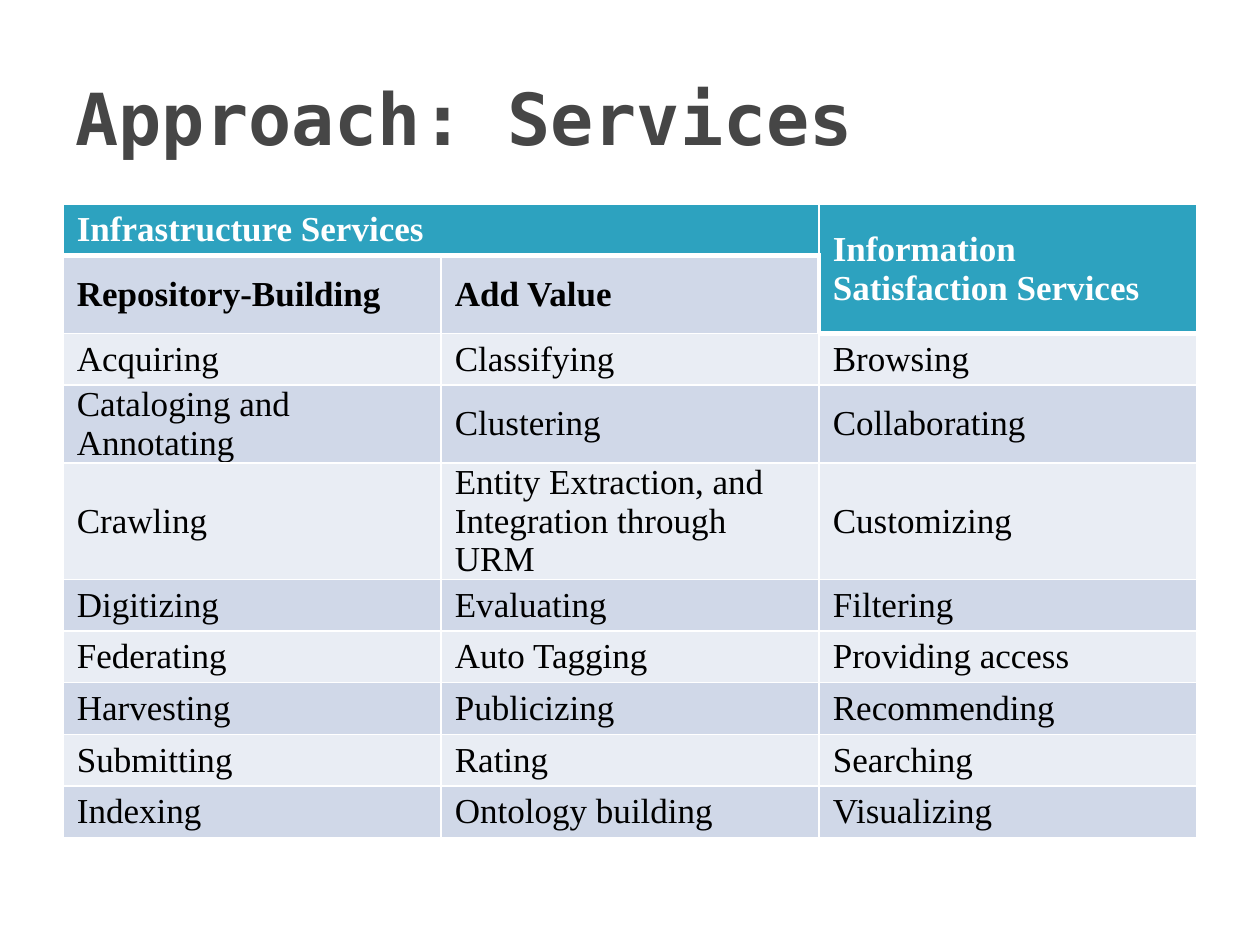
import lxml.etree
import pptx
import pptx.dml.color
import pptx.enum.text
import pptx.oxml.ns
import pptx.util

WIDE, HIGH = 10, 7.5
LEFT, SPAN = WIDE * 0.05, WIDE * 0.9
ROW = 0.41
HUES = {
    "head": "2DA2BF",
    "dark": "D0D8E8",
    "pale": "E9EDF4",
    "white": "FFFFFF",
    "black": "000000",
    "title": "464646",
}
ROWS = [
    ("Infrastructure Services", "", "Information Satisfaction Services"),
    ("Repository-Building", "Add Value", ""),
    ("Acquiring", "Classifying", "Browsing"),
    ("Cataloging and Annotating", "Clustering", "Collaborating"),
    ("Crawling", "Entity Extraction, and Integration through URM", "Customizing"),
    ("Digitizing", "Evaluating", "Filtering"),
    ("Federating", "Auto Tagging", "Providing access"),
    ("Harvesting", "Publicizing", "Recommending"),
    ("Submitting", "Rating", "Searching"),
    ("Indexing", "Ontology building", "Visualizing"),
]
COLS = len(ROWS[0])
MERGES = [((0, 0), (0, 1)), ((0, 2), (1, 2))]


def color(name):
    return pptx.dml.color.RGBColor.from_string(HUES[name])


def write(frame, text, font="Times New Roman", size=20, hue="black",
          bold=False, indent=0):
    para = frame.paragraphs[0]
    para.alignment = pptx.enum.text.PP_ALIGN.LEFT
    if indent:
        props = para._p.get_or_add_pPr()
        props.set("marL", str(pptx.util.Inches(indent)))
        props.set("indent", "0")
    run = para.add_run()
    run.text = text
    run.font.name = font
    run.font.size = pptx.util.Pt(size)
    run.font.bold = bold
    run.font.color.rgb = color(hue)


def is_head(row, col):
    return row == 0 or (row, col) == (1, 2)


def rule(cell, side, width):
    """Draw one solid white border of a cell."""
    name = pptx.oxml.ns.qn
    line = lxml.etree.SubElement(
        cell._tc.get_or_add_tcPr(), name("a:ln" + side),
        w=str(pptx.util.Pt(width)))
    fill = lxml.etree.SubElement(line, name("a:solidFill"))
    lxml.etree.SubElement(fill, name("a:srgbClr"), val=HUES["white"])


def frame_cell(cell, row, col):
    """Border a cell, thickly where the heading meets the body."""
    near = {
        "L": (row, col - 1),
        "R": (row, col + cell.span_width),
        "T": (row - 1, col),
        "B": (row + cell.span_height, col),
    }
    for side, (r, c) in near.items():
        inside = 0 <= r < len(ROWS) and 0 <= c < COLS
        thick = inside and is_head(r, c) != is_head(row, col)
        rule(cell, side, 3 if thick else 1)


def fill_cell(cell, row, col, text):
    head = is_head(row, col)
    frame_cell(cell, row, col)
    cell.fill.solid()
    cell.fill.fore_color.rgb = color(
        "head" if head else "dark" if row % 2 else "pale")
    cell.vertical_anchor = pptx.enum.text.MSO_ANCHOR.MIDDLE
    cell.margin_left = cell.margin_right = pptx.util.Inches(0.07)
    cell.margin_top = cell.margin_bottom = 0
    if text:
        write(cell.text_frame, text, hue="white" if head else "black",
              bold=row < 2, indent=0.04)


def add_grid(slide):
    box = [pptx.util.Inches(n) for n in (LEFT, 1.62, SPAN, ROW * len(ROWS))]
    table = slide.shapes.add_table(len(ROWS), COLS, *box).table
    for line in table.rows:
        line.height = pptx.util.Inches(ROW)
    for start, end in MERGES:
        table.cell(*start).merge(table.cell(*end))
    for row, texts in enumerate(ROWS):
        for col, text in enumerate(texts):
            fill_cell(table.cell(row, col), row, col, text)


def add_title(slide, text):
    title = slide.shapes.title
    title.left, title.top, title.width, title.height = (
        pptx.util.Inches(n) for n in (LEFT, HIGH * 0.04, SPAN, HIGH / 6))
    title.text_frame.vertical_anchor = pptx.enum.text.MSO_ANCHOR.MIDDLE
    write(title.text_frame, text, font="DejaVu Sans Mono", size=41,
          hue="title", bold=True)


def main():
    deck = pptx.Presentation()
    deck.slide_width = pptx.util.Inches(WIDE)
    deck.slide_height = pptx.util.Inches(HIGH)
    slide = deck.slides.add_slide(deck.slide_layouts.get_by_name("Title Only"))
    add_grid(slide)
    add_title(slide, "Approach: Services")
    deck.save("out.pptx")


if __name__ == "__main__":
    main()
